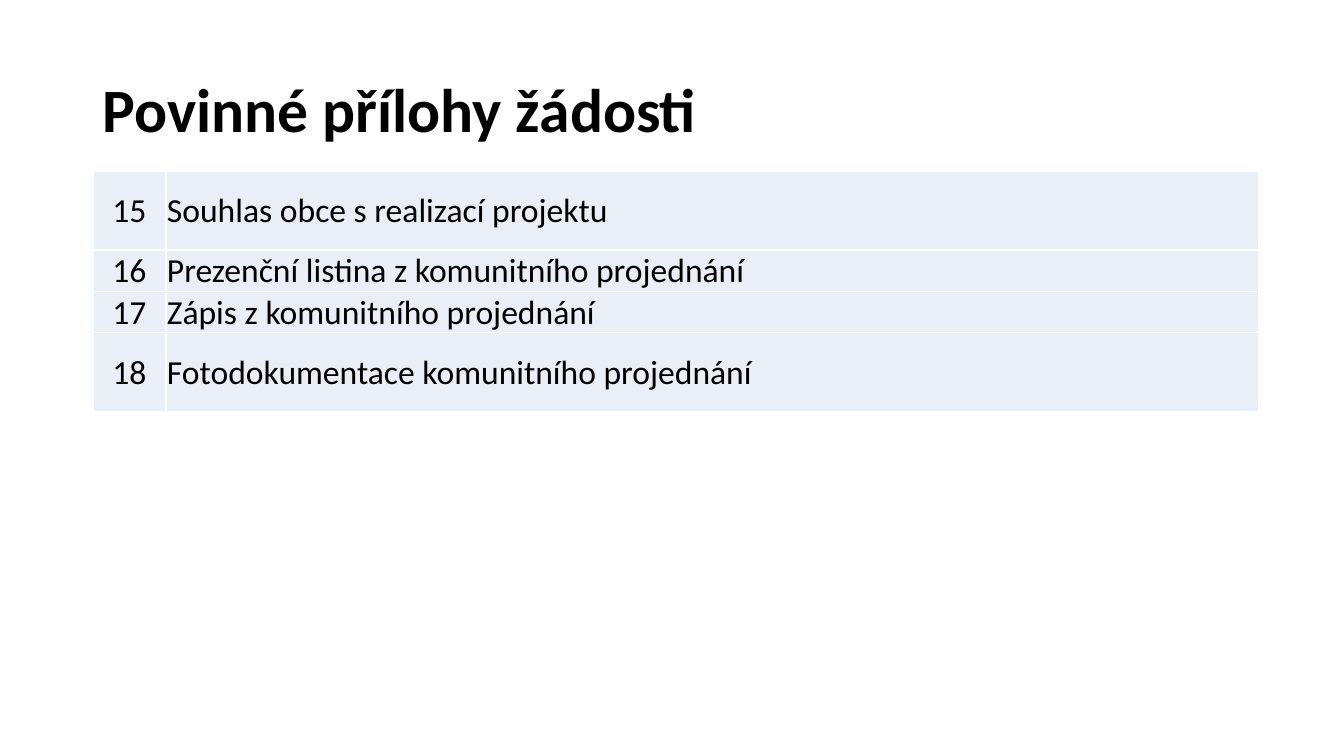
from lxml import etree
from pptx import Presentation
from pptx.dml.color import RGBColor
from pptx.enum.text import MSO_ANCHOR, PP_ALIGN
from pptx.oxml.ns import qn
from pptx.util import Pt

EMU_PER_PX = 12192000 / 1344
MIDDLE = MSO_ANCHOR.MIDDLE
CENTER, JUSTIFY = PP_ALIGN.CENTER, PP_ALIGN.JUSTIFY


def px(length):
    return round(length * EMU_PER_PX)


def color(value):
    return RGBColor.from_string(value)


class SlideBuilder:
    font_name = "Calibri"
    text_color = "000000"
    cell_color = "EAEFF7"
    border_color = "FFFFFF"

    def __init__(self, presentation):
        self.slide = presentation.slides.add_slide(presentation.slide_layouts[6])

    def style(self, paragraph, size, bold=False):
        font = paragraph.font
        font.name, font.size, font.bold = self.font_name, Pt(size), bold
        font.color.rgb = color(self.text_color)

    def title(self, text, left, top, width, height):
        shape = self.slide.shapes.add_textbox(px(left), px(top), px(width), px(height))
        frame = shape.text_frame
        frame.word_wrap = True
        frame.vertical_anchor = MIDDLE
        paragraph = frame.paragraphs[0]
        paragraph.text = text
        paragraph.line_spacing = 0.9
        self.style(paragraph, 44, bold=True)

    def borders(self, cell):
        properties = cell._tc.get_or_add_tcPr()
        for index, side in enumerate(("lnL", "lnR", "lnT", "lnB")):
            line = etree.Element(qn(f"a:{side}"), w=str(Pt(1)))
            fill = etree.SubElement(line, qn("a:solidFill"))
            etree.SubElement(fill, qn("a:srgbClr"), val=self.border_color)
            properties.insert(index, line)

    def cell(self, cell, text, alignment):
        cell.fill.solid()
        cell.fill.fore_color.rgb = color(self.cell_color)
        self.borders(cell)
        cell.vertical_anchor = MIDDLE
        cell.margin_left = cell.margin_right = cell.margin_top = px(1)
        cell.margin_bottom = 0
        paragraph = cell.text_frame.paragraphs[0]
        paragraph.text = text
        paragraph.alignment = alignment
        self.style(paragraph, 24)

    def table(self, rows, left, top, widths, heights, alignments):
        table = self.slide.shapes.add_table(
            len(rows), len(widths), px(left), px(top), px(sum(widths)), px(sum(heights))
        ).table
        for column, width in zip(table.columns, widths):
            column.width = px(width)
        for row, height, texts in zip(table.rows, heights, rows):
            row.height = px(height)
            for cell, text, alignment in zip(row.cells, texts, alignments):
                self.cell(cell, text, alignment)


def main():
    presentation = Presentation()
    presentation.slide_width, presentation.slide_height = px(1344), px(756)
    builder = SlideBuilder(presentation)

    # Heading
    builder.title("Povinné přílohy žádosti", 93, 40, 1159, 146)

    # Numbered list of attachments
    attachments = [
        "Souhlas obce s realizací projektu",
        "Prezenční listina z komunitního projednání",
        "Zápis z komunitního projednání",
        "Fotodokumentace komunitního projednání",
    ]
    rows = [(str(number), name) for number, name in enumerate(attachments, 15)]
    builder.table(rows, 93, 171, (73, 1093), (79, 40, 40, 79), (CENTER, JUSTIFY))

    presentation.save("out.pptx")


if __name__ == "__main__":
    main()
